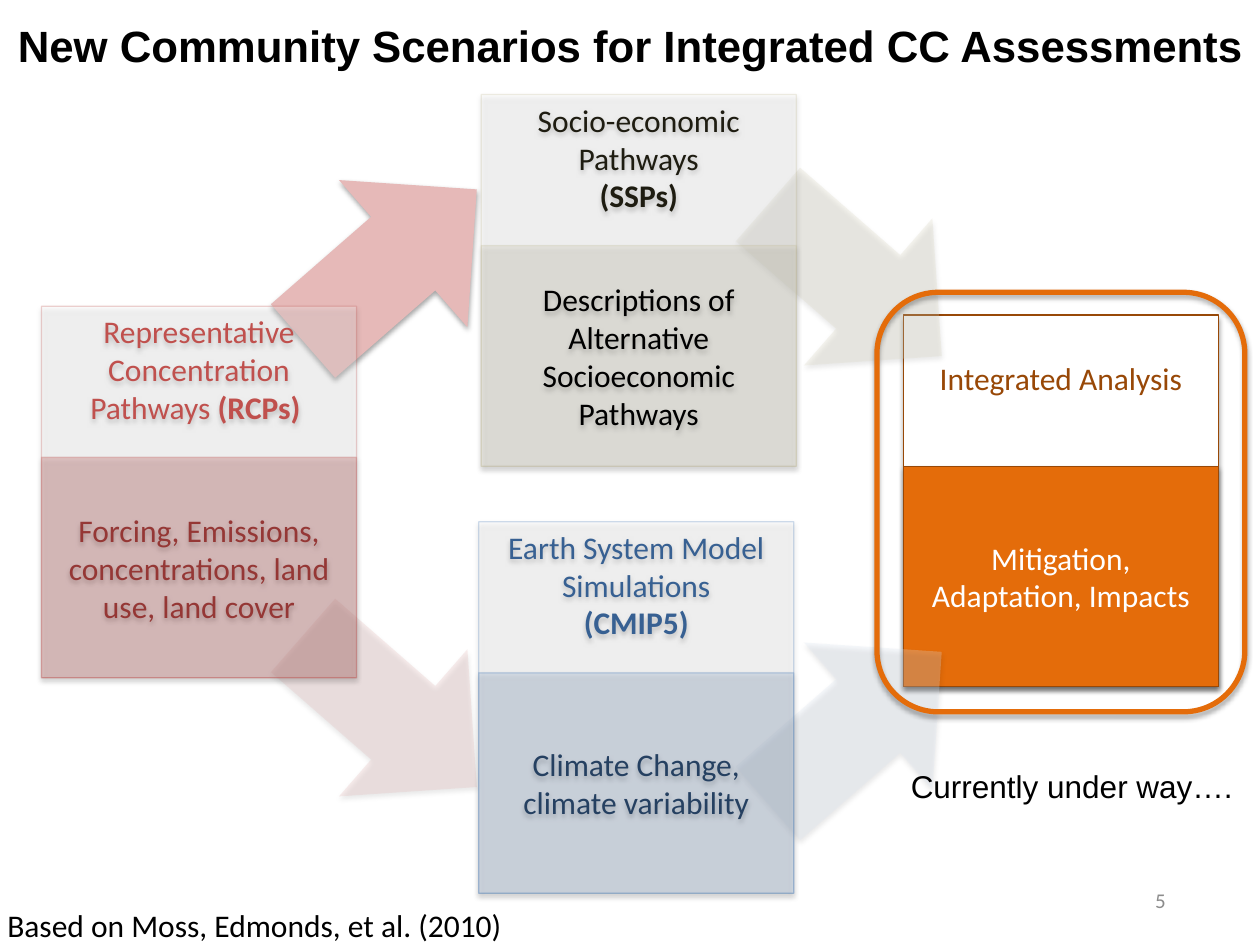
"""Build the slide on new community scenarios for integrated assessments."""
from lxml import etree
from pptx import Presentation
from pptx.dml.color import RGBColor
from pptx.enum import shapes, text
from pptx.oxml import ns
from pptx.util import Inches, Pt

CARD_WIDTH, CARD_HEIGHT, BODY_TOP, BODY_HEIGHT = 2.5, 2.95, 1.2, 1.75
ARROW_SIZE = (1.83, 1.55)
FAINT = 25


def color(value):
    """Return the colour of a hex string."""
    return RGBColor.from_string(value)


def add_alpha(parent, percent):
    """Give the colour in a fill or line an opacity."""
    for tone in parent.iter(ns.qn("a:srgbClr")):
        etree.SubElement(tone, ns.qn("a:alpha")).set("val", str(percent * 1000))


def add_shadow(shape):
    """Cast a soft shadow straight down."""
    shape.shadow.inherit = False
    effects = shape._element.spPr.find(ns.qn("a:effectLst"))
    shadow = etree.SubElement(effects, ns.qn("a:outerShdw"), {
        "blurRad": str(Pt(3.1)), "dist": str(Pt(1.8)),
        "dir": "5400000", "rotWithShape": "0"})
    etree.SubElement(shadow, ns.qn("a:srgbClr"), val="000000")
    add_alpha(shadow, 35)


def add_figure(slide, kind, box, fill=None, line=None, weight=0.75, opacity=100):
    """Add a shadowed preset shape with optional fill and line."""
    figure = slide.shapes.add_shape(kind, *map(Inches, box))
    if fill:
        figure.fill.solid()
        figure.fill.fore_color.rgb = color(fill)
    else:
        figure.fill.background()
    if line:
        figure.line.color.rgb = color(line)
        figure.line.width = Pt(weight)
    else:
        figure.line.fill.background()
    if opacity < 100:
        add_alpha(figure._element.spPr, opacity)
    add_shadow(figure)
    return figure


def write(frame, paragraphs, ink, size=18, font="Calibri",
          align=text.PP_ALIGN.CENTER, anchor=text.MSO_ANCHOR.MIDDLE):
    """Fill a frame with paragraphs, each a list of (wording, bold) runs."""
    frame.word_wrap = True
    frame.vertical_anchor = anchor
    for index, runs in enumerate(paragraphs):
        paragraph = frame.add_paragraph() if index else frame.paragraphs[0]
        paragraph.alignment = align
        paragraph.font.size = Pt(size)
        paragraph.font.name = font
        paragraph.font.color.rgb = color(ink)
        for wording, bold in runs:
            run = paragraph.add_run()
            run.text = wording
            if bold:
                run.font.bold = True


def add_card(slide, left, top, heading, heading_ink, body, body_ink, fill, line,
             opacity=FAINT, heading_inset=0.05):
    """Add a card with a heading above a filled body."""
    rectangle = shapes.MSO_SHAPE.RECTANGLE
    card = add_figure(slide, rectangle, (left, top, CARD_WIDTH, CARD_HEIGHT),
                      "FFFFFF", line, opacity=opacity)
    write(card.text_frame, heading, heading_ink, anchor=text.MSO_ANCHOR.TOP)
    card.text_frame.margin_top = Inches(heading_inset)
    detail = add_figure(slide, rectangle,
                        (left, top + BODY_TOP, CARD_WIDTH, BODY_HEIGHT),
                        fill, line, opacity=opacity)
    write(detail.text_frame, [[(body, False)]], body_ink)


def add_arrow(slide, left, top, angle, fill, opacity=FAINT):
    """Add a rotated block arrow."""
    arrow = add_figure(slide, shapes.MSO_SHAPE.RIGHT_ARROW,
                       (left, top, *ARROW_SIZE), fill, opacity=opacity)
    arrow.rotation = angle


def add_label(slide, box, wording, font="Calibri"):
    """Add a one-line label that does not wrap."""
    frame = slide.shapes.add_textbox(*map(Inches, box)).text_frame
    write(frame, [[(wording, False)]], "000000", font=font,
          align=text.PP_ALIGN.LEFT, anchor=text.MSO_ANCHOR.TOP)
    frame.word_wrap = False
    frame.auto_size = text.MSO_AUTO_SIZE.SHAPE_TO_FIT_TEXT


def add_title(slide, wording):
    """Place and format the title."""
    title = slide.shapes.title
    title.left, title.top, title.width, title.height = map(
        Inches, (0, 0.15, 10, 0.42))
    frame = title.text_frame
    write(frame, [[(wording, True)]], "000000", 25, "Arial")
    frame.margin_left = frame.margin_right = 0
    frame.margin_top = frame.margin_bottom = 0
    frame.auto_size = text.MSO_AUTO_SIZE.SHAPE_TO_FIT_TEXT


def add_page_number(slide, number):
    """Add the grey page number."""
    box = slide.shapes.add_textbox(*map(Inches, (8.67, 6.95, 1.08, 0.39)))
    write(box.text_frame, [[(number, False)]], "8C8C8C", 12)


def main():
    """Build and save the slide."""
    deck = Presentation()
    deck.slide_width, deck.slide_height = Inches(10), Inches(7.5)
    slide = deck.slides.add_slide(deck.slide_layouts[5])
    down, up = 41.1, 318.9

    add_title(slide, "New Community Scenarios for Integrated CC Assessments")
    add_card(slide, 7.17, 2.5, [[("Integrated Analysis", False)]], "984807",
             "Mitigation, Adaptation, Impacts", "FFFFFF", "E46C0A", "984807",
             opacity=100, heading_inset=0.35)
    add_arrow(slide, 5.87, 1.45, down, "DDD9C3")
    add_arrow(slide, 5.87, 5, up, "DCE6F2")
    add_figure(slide, shapes.MSO_SHAPE.ROUNDED_RECTANGLE,
               (6.96, 2.32, 2.92, 3.33), line="E46C0A", weight=3)
    add_arrow(slide, 2.18, 1.33, up, "E6B9B8", opacity=100)
    add_arrow(slide, 2.18, 4.87, down, "E6B9B8")
    add_page_number(slide, "5")
    add_card(slide, 0.33, 2.43,
             [[("Representative Concentration Pathways ", False), ("(RCPs) ", True)]],
             "C0504D", "Forcing, Emissions, concentrations, land use, land cover",
             "953735", "C0504D", "C0504D")
    add_card(slide, 3.82, 0.75,
             [[("Socio-economic Pathways", False)], [("(SSPs)", True)]],
             "1E1C11", "Descriptions of Alternative Socioeconomic Pathways",
             "000000", "DDD9C3", "C4BD97")
    add_card(slide, 3.8, 4.14,
             [[("Earth System Model Simulations", False)], [("(CMIP5)", True)]],
             "376092", "Climate Change, climate variability",
             "254061", "95B3D7", "4A7EBB")
    add_label(slide, (-0.04, 7.14, 4.17, 0.4), "Based on Moss, Edmonds, et al. (2010)")
    add_label(slide, (7.13, 6.04, 2.78, 0.4), "Currently under way….", "Arial")
    deck.save("out.pptx")


if __name__ == "__main__":
    main()
